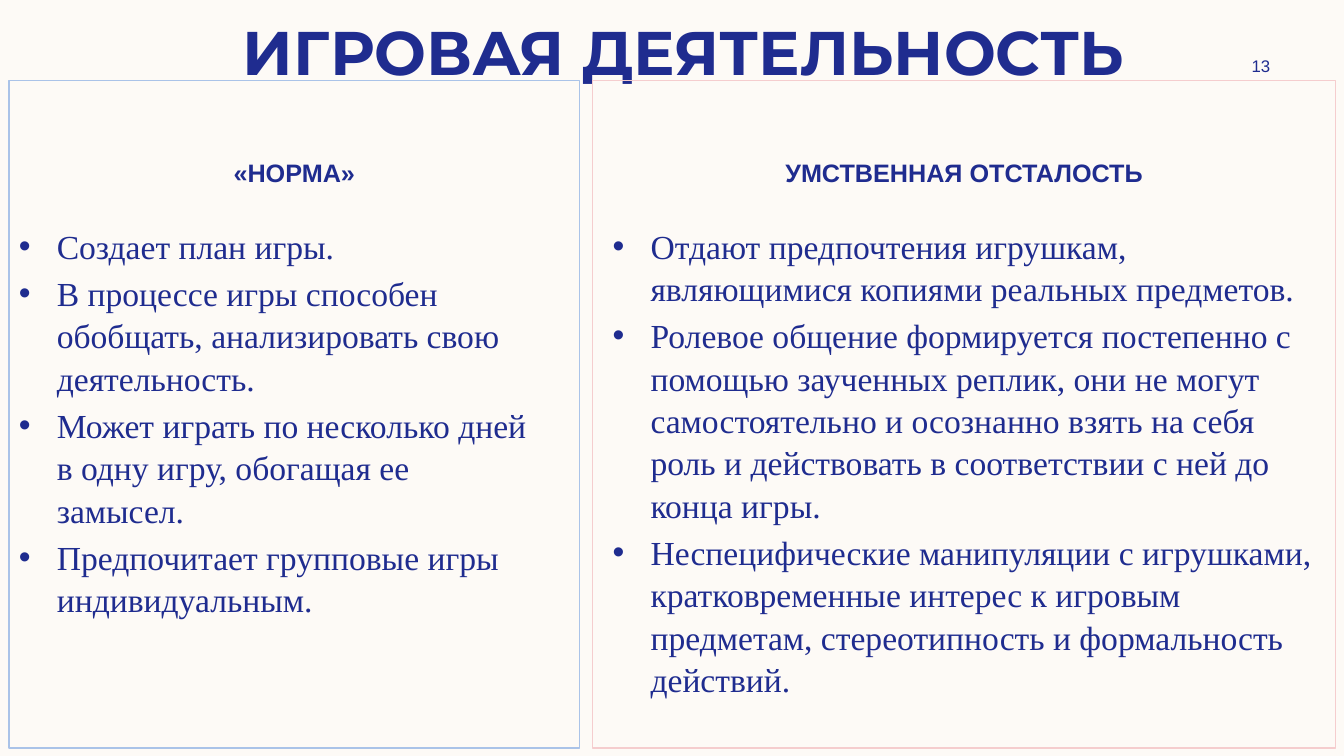
from pptx import Presentation
from pptx import util as u
from pptx.dml.color import RGBColor
from pptx.enum import shapes, text
from lxml import etree

# Content
TITLE = "ИГРОВАЯ ДЕЯТЕЛЬНОСТЬ"
PAGE_NUMBER = "13"
COLUMNS = [
    {
        "heading": "«НОРМА»",
        "frame": (6.5, 407.5), "list": (6.5, 388), "border": "blue",
        "points": [
            "Создает план игры.",
            "В процессе игры способен обобщать, анализировать свою деятельность.",
            "Может играть по несколько дней в одну игру, обогащая ее замысел.",
            "Предпочитает групповые игры индивидуальным.",
        ],
    },
    {
        "heading": "УМСТВЕННАЯ ОТСТАЛОСТЬ",
        "frame": (423.4, 530.6), "list": (430.6, 522.7), "border": "pink",
        "points": [
            "Отдают предпочтения игрушкам, являющимися копиями реальных предметов.",
            "Ролевое общение формируется постепенно с помощью заученных реплик, "
            "они не могут самостоятельно и осознанно взять на себя роль и "
            "действовать в соответствии с ней до конца игры.",
            "Неспецифические манипуляции с игрушками, кратковременные интерес "
            "к игровым предметам, стереотипность и формальность действий.",
        ],
    },
]
COLORS = {"paper": "FDFAF6", "ink": "1F2C8F", "blue": "AAC3E8", "pink": "F5CDCE"}

# Layout in points
FRAME_TOP, FRAME_HEIGHT = 57.6, 476.6
LIST_TOP, LIST_HEIGHT = 156.2, 374
HEADING_INSET = 54
BULLET_INDENT = 27


def color(name):
    return RGBColor.from_string(COLORS[name])


def place(left, top, width, height):
    return [u.Pt(value) for value in (left, top, width, height)]


def write(box, lines, font, size, bold=False, align=text.PP_ALIGN.CENTER):
    frame = box.text_frame
    frame.word_wrap = True
    for index, line in enumerate(lines):
        para = frame.paragraphs[0] if index == 0 else frame.add_paragraph()
        para.text = line
        para.alignment = align
        para.font.name = font
        para.font.size = u.Pt(size)
        para.font.bold = bold
        para.font.color.rgb = color("ink")
    return frame


def add_bullet(para):
    para.space_before = u.Pt(3.6)
    para.line_spacing = 1.05
    props = para._p.get_or_add_pPr()
    props.set("marL", str(u.Pt(BULLET_INDENT)))
    props.set("indent", str(-u.Pt(BULLET_INDENT)))
    namespace = "{http://schemas.openxmlformats.org/drawingml/2006/main}"
    font = etree.Element(namespace + "buFont", typeface="Arial")
    mark = etree.Element(namespace + "buChar", char="•")
    props.find(namespace + "spcBef").addnext(font)
    font.addnext(mark)


deck = Presentation()
deck.slide_width, deck.slide_height = u.Pt(960), u.Pt(540)
page = deck.slides.add_slide(deck.slide_layouts[6])
page.background.fill.solid()
page.background.fill.fore_color.rgb = color("paper")

# Title and page number
title = page.shapes.add_textbox(*place(68.4, 6.5, 840.2, 60.5))
write(title, [TITLE], "Montserrat", 44, bold=True)
number = page.shapes.add_textbox(*place(861.8, 36, 77.8, 21.6))
write(number, [PAGE_NUMBER], "Arial", 12).vertical_anchor = text.MSO_ANCHOR.MIDDLE

# Columns: outlined frame with heading, bulleted list on top
for column in COLUMNS:
    left, width = column["frame"]
    panel = page.shapes.add_shape(
        shapes.MSO_SHAPE.RECTANGLE, *place(left, FRAME_TOP, width, FRAME_HEIGHT))
    panel.shadow.inherit = False
    panel.fill.background()
    panel.line.color.rgb = color(column["border"])
    panel.line.width = u.Pt(1)
    heading = write(panel, [column["heading"]], "Arial", 18, bold=True)
    heading.vertical_anchor = text.MSO_ANCHOR.TOP
    heading.margin_top = u.Pt(HEADING_INSET)
    heading.paragraphs[0].line_spacing = 1.05

    left, width = column["list"]
    box = page.shapes.add_textbox(*place(left, LIST_TOP, width, LIST_HEIGHT))
    points = write(box, column["points"], "Times New Roman", 24,
                   align=text.PP_ALIGN.LEFT)
    for para in points.paragraphs:
        add_bullet(para)

deck.save("out.pptx")
